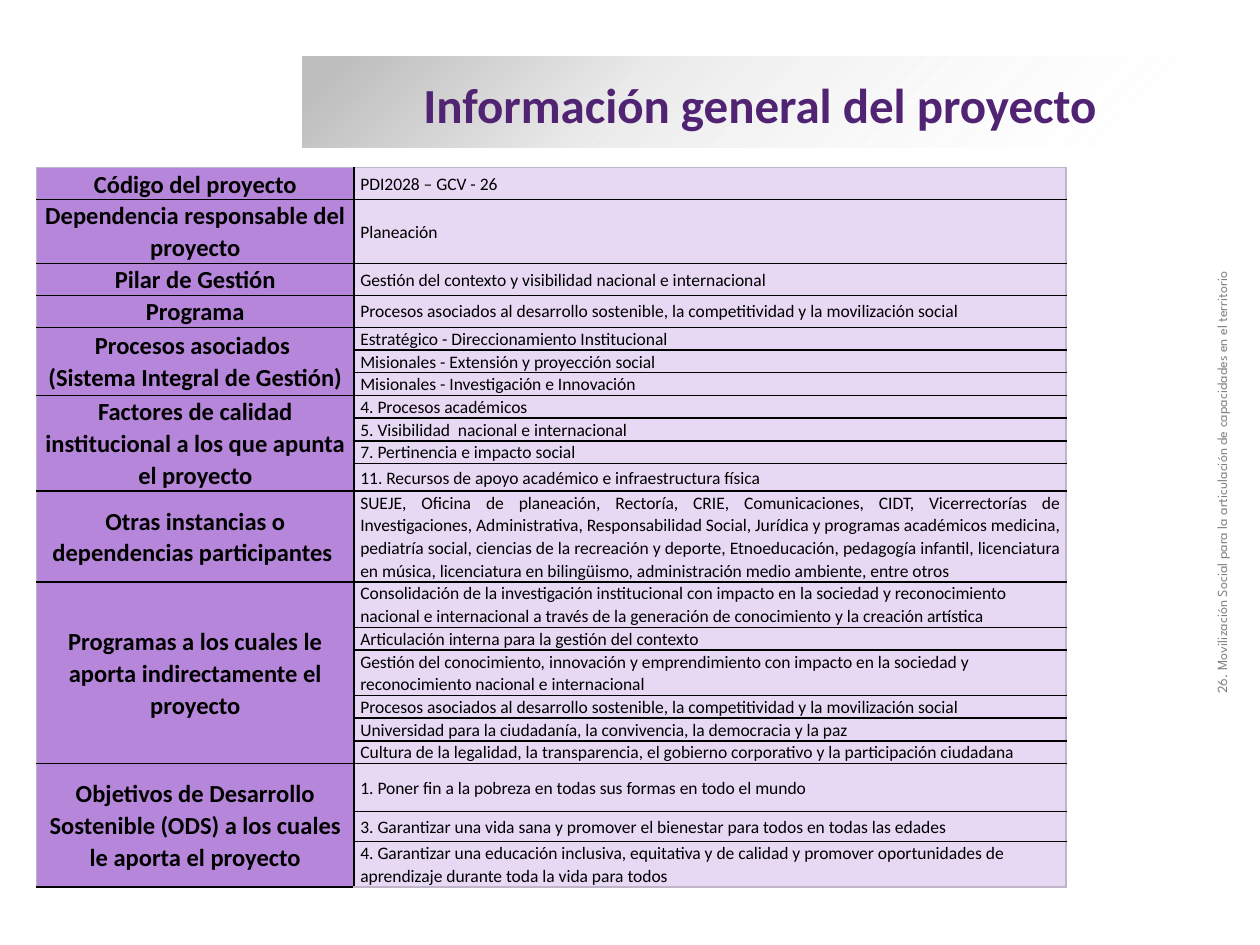
from pptx import Presentation
from pptx.dml.color import RGBColor
from pptx.enum.shapes import MSO_SHAPE
from pptx.enum.text import MSO_ANCHOR, PP_ALIGN
from pptx.oxml import parse_xml
from pptx.oxml.ns import nsdecls, qn
from pptx.util import Inches, Pt

RECTANGLE = MSO_SHAPE.RECTANGLE
MIDDLE = MSO_ANCHOR.MIDDLE
LEFT, CENTER, JUSTIFY = PP_ALIGN.LEFT, PP_ALIGN.CENTER, PP_ALIGN.JUSTIFY

BLACK = RGBColor(0x00, 0x00, 0x00)
WHITE = RGBColor(0xFF, 0xFF, 0xFF)
SILVER = RGBColor(0xBF, 0xBF, 0xBF)
GRAY = RGBColor(0x80, 0x80, 0x80)
PURPLE = RGBColor(0x51, 0x23, 0x73)
LABEL_FILL = RGBColor(0xB6, 0x86, 0xDA)
VALUE_FILL = RGBColor(0xE7, 0xD8, 0xF4)
OUTER_LINE = RGBColor(0xBF, 0xB5, 0xC8)

TITLE_FONT = {"name": "Calibri", "size": Pt(28), "bold": True}
LABEL_FONT = {"name": "Calibri", "size": Pt(14), "bold": True}
VALUE_FONT = {"name": "Calibri", "size": Pt(10), "bold": False}
SIDE_FONT = {"name": "League Spartan", "size": Pt(8)}

BANNER_STOPS = [(5, SILVER, 100), (37, SILVER, 31), (100, WHITE, 0)]
COLUMN_WIDTHS = [2.52, 5.65]

# Each section: label, value alignment, [(row height, value), ...]
SECTIONS = [
    ("Código del proyecto", LEFT, [(0.25, "PDI2028 – GCV - 26")]),
    ("Dependencia responsable del proyecto", LEFT, [(0.5, "Planeación")]),
    ("Pilar de Gestión", LEFT, [
        (0.25, "Gestión del contexto y visibilidad nacional e internacional")]),
    ("Programa", JUSTIFY, [
        (0.25, "Procesos asociados al desarrollo sostenible, la competitividad y la movilización social")]),
    ("Procesos asociados \v(Sistema Integral de Gestión)", LEFT, [
        (0.18, "Estratégico - Direccionamiento Institucional"),
        (0.18, "Misionales - Extensión y proyección social"),
        (0.18, "Misionales - Investigación e Innovación")]),
    ("Factores de calidad institucional a los que apunta el proyecto", LEFT, [
        (0.18, "4. Procesos académicos"),
        (0.18, "5. Visibilidad  nacional e internacional"),
        (0.18, "7. Pertinencia e impacto social"),
        (0.21, "11. Recursos de apoyo académico e infraestructura física")]),
    ("Otras instancias o dependencias participantes ", JUSTIFY, [
        (0.71, "SUEJE, Oficina de planeación, Rectoría, CRIE, Comunicaciones, CIDT, Vicerrectorías de "
               "Investigaciones, Administrativa, Responsabilidad Social, Jurídica y programas académicos "
               "medicina, pediatría social, ciencias de la recreación y deporte, Etnoeducación, pedagogía "
               "infantil, licenciatura en música, licenciatura en bilingüismo, administración medio "
               "ambiente, entre otros")]),
    ("Programas a los cuales le aporta indirectamente el proyecto", LEFT, [
        (0.36, "Consolidación de la investigación institucional con impacto en la sociedad y reconocimiento "
               "nacional e internacional a través de la generación de conocimiento y la creación artística"),
        (0.18, "Articulación interna para la gestión del contexto"),
        (0.36, "Gestión del conocimiento, innovación y emprendimiento con impacto en la sociedad y "
               "reconocimiento nacional e internacional"),
        (0.18, "Procesos asociados al desarrollo sostenible, la competitividad y la movilización social"),
        (0.18, "Universidad para la ciudadanía, la convivencia, la democracia y la paz"),
        (0.18, "Cultura de la legalidad, la transparencia, el gobierno corporativo y la participación ciudadana")]),
    ("Objetivos de Desarrollo Sostenible (ODS) a los cuales le aporta el proyecto", LEFT, [
        (0.38, "1. Poner fin a la pobreza en todas sus formas en todo el mundo"),
        (0.24, "3. Garantizar una vida sana y promover el bienestar para todos en todas las edades"),
        (0.36, "4. Garantizar una educación inclusiva, equitativa y de calidad y promover oportunidades de "
               "aprendizaje durante toda la vida para todos")]),
]


def set_attributes(target, values):
    """Set every attribute named in a dict of format values."""
    for name, value in values.items():
        setattr(target, name, value)


def write_paragraph(text_frame, text, font, color, alignment, line_spacing=None):
    """Write one formatted paragraph into a text frame."""
    paragraph = text_frame.paragraphs[0]
    paragraph.text = text
    set_attributes(paragraph, {"alignment": alignment, "line_spacing": line_spacing})
    for run in paragraph.runs:
        set_attributes(run.font, font)
        run.font.color.rgb = color


def add_banner(slide):
    """Draw the fading band behind the title."""
    shape = slide.shapes.add_shape(RECTANGLE, Inches(2.4), Inches(0.45), Inches(6.98), Inches(0.72))
    shape.shadow.inherit = False
    shape.line.fill.background()
    shape.fill.gradient()
    stops = "".join(
        f'<a:gs pos="{position * 1000}"><a:srgbClr val="{color}">'
        f'<a:alpha val="{alpha * 1000}"/></a:srgbClr></a:gs>'
        for position, color, alpha in BANNER_STOPS)
    gradient = parse_xml(
        f'<a:gradFill {nsdecls("a")} rotWithShape="1"><a:gsLst>{stops}</a:gsLst>'
        '<a:lin ang="2700000" scaled="0"/></a:gradFill>')
    properties = shape.element.spPr
    properties.replace(properties.find(qn("a:gradFill")), gradient)
    slide.shapes._spTree.remove(shape.element)
    slide.shapes._spTree.insert(2, shape.element)


def format_title(slide):
    """Place and fill the title placeholder."""
    title = slide.shapes.title
    set_attributes(title, {"left": Inches(3.26), "top": Inches(0.54),
                           "width": Inches(6.2), "height": Inches(0.57)})
    set_attributes(title.text_frame, {"vertical_anchor": MIDDLE, "word_wrap": True})
    write_paragraph(title.text_frame, "Información general del proyecto", TITLE_FONT, PURPLE, LEFT)


def set_borders(cell, colors):
    """Draw the four cell borders in the given colours."""
    properties = cell._tc.get_or_add_tcPr()
    for side, color in colors.items():
        properties.append(parse_xml(
            f'<a:ln{side} {nsdecls("a")} w="{Pt(1)}"><a:solidFill>'
            f'<a:srgbClr val="{color}"/></a:solidFill></a:ln{side}>'))


def format_cell(cell, fill, margin):
    """Set the fill, anchor and margins of a cell."""
    cell.fill.solid()
    cell.fill.fore_color.rgb = fill
    set_attributes(cell, {"vertical_anchor": MIDDLE, "margin_top": 0, "margin_bottom": 0,
                          "margin_left": Inches(margin), "margin_right": Inches(margin)})


def add_project_table(slide):
    """Build the table of project data, one merged label per section."""
    rows = [(height, value, alignment) for _, alignment, values in SECTIONS for height, value in values]
    table = slide.shapes.add_table(
        len(rows), 2, Inches(0.29), Inches(1.33), Inches(sum(COLUMN_WIDTHS)),
        Inches(sum(height for height, _, _ in rows))).table
    set_attributes(table, {"first_row": False, "horz_banding": False})
    for column, width in zip(table.columns, COLUMN_WIDTHS):
        column.width = Inches(width)
    for index, (height, value, alignment) in enumerate(rows):
        table.rows[index].height = Inches(height)
        label_cell, value_cell = table.cell(index, 0), table.cell(index, 1)
        top = OUTER_LINE if index == 0 else BLACK
        bottom = OUTER_LINE if index == len(rows) - 1 else BLACK
        set_borders(label_cell, {"L": OUTER_LINE, "R": BLACK, "T": top, "B": bottom})
        set_borders(value_cell, {"L": BLACK, "R": OUTER_LINE, "T": top, "B": bottom})
        format_cell(label_cell, LABEL_FILL, 0.04)
        format_cell(value_cell, VALUE_FILL, 0.05)
        write_paragraph(label_cell.text_frame, "", LABEL_FONT, BLACK, CENTER, 1.07)
        write_paragraph(value_cell.text_frame, value, VALUE_FONT, BLACK, alignment, 1.07)
    first = 0
    for label, _, values in SECTIONS:
        cell = table.cell(first, 0)
        last = first + len(values) - 1
        if last > first:
            cell.merge(table.cell(last, 0))
        write_paragraph(cell.text_frame, label, LABEL_FONT, BLACK, CENTER, 1.07)
        first = last + 1


def add_side_text(slide):
    """Add the project name reading upwards along the right edge."""
    box = slide.shapes.add_textbox(Inches(7.28), Inches(3.71), Inches(4.84), Inches(0.24))
    box.rotation = 270
    box.text_frame.word_wrap = True
    write_paragraph(box.text_frame,
                    "26. Movilización Social para la articulación de capacidades en el territorio",
                    SIDE_FONT, GRAY, CENTER)


def main():
    """Build the slide and save the presentation."""
    presentation = Presentation()
    set_attributes(presentation, {"slide_width": Inches(10), "slide_height": Inches(7.5)})
    slide = presentation.slides.add_slide(presentation.slide_layouts[5])
    add_banner(slide)
    format_title(slide)
    add_project_table(slide)
    add_side_text(slide)
    presentation.save("out.pptx")


if __name__ == "__main__":
    main()
